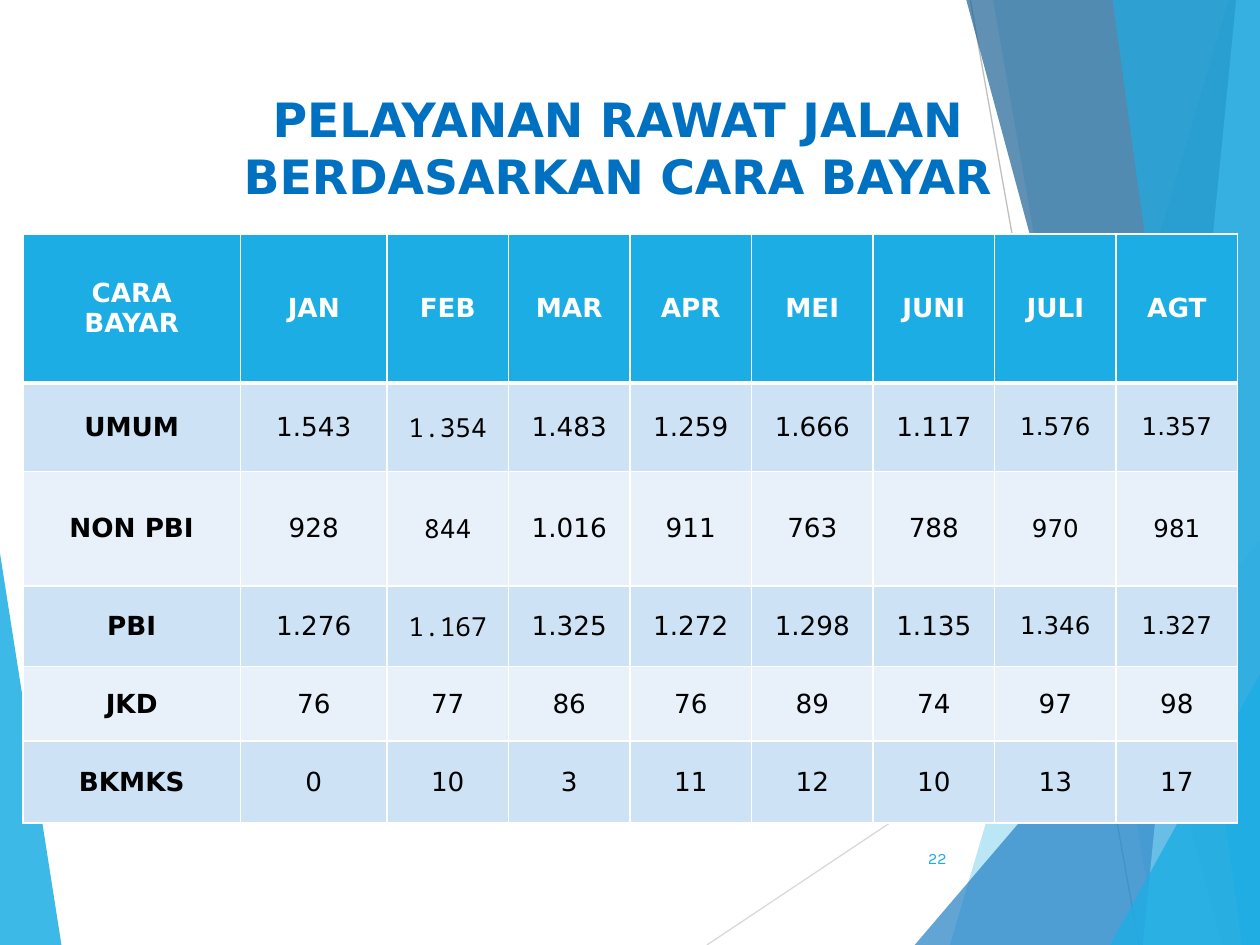
from lxml.etree import SubElement
from pptx import Presentation
from pptx.dml.color import RGBColor
from pptx.enum.shapes import MSO_CONNECTOR
from pptx.enum.text import MSO_ANCHOR as Anchor, MSO_AUTO_SIZE, PP_ALIGN as Align
from pptx.oxml.ns import qn
from pptx.util import Cm, Pt

SANS, MONO = "DejaVu Sans", "Noto Sans Mono"
CYAN, WHITE, BLACK = "1CADE4", "FFFFFF", "000000"
BANDS = ("CDE3F5", "E8F1FA")

MONTHS = ["JAN", "FEB", "MAR", "APR", "MEI", "JUNI", "JULI", "AGT"]
VISITS = {
    "UMUM": ["1.543", "1.354", "1.483", "1.259", "1.666", "1.117", "1.576", "1.357"],
    "NON PBI": ["928", "844", "1.016", "911", "763", "788", "970", "981"],
    "PBI": ["1.276", "1.167", "1.325", "1.272", "1.298", "1.135", "1.346", "1.327"],
    "JKD": ["76", "77", "86", "76", "89", "74", "97", "98"],
    "BKMKS": ["0", "10", "3", "11", "12", "10", "13", "17"],
}
ROW_HEIGHTS = [3, 1.78, 2.31, 1.63, 1.5, 1.65]
COLUMN_WIDTHS = [4.39, 2.95] + [2.45] * 7

# Left edge of each facet, top point to bottom x; then colour and opacity in %
FACETS = [
    (6.35, 0, 0.73, CYAN, 30),
    (1.6, 0, 4.92, CYAN, 20),
    (6.98, 10.9, 0.02, "2683C6", 72),
    (1.06, 0, 6.22, "1D6294", 70),
    (6.5, 0, 4.62, "77CEEF", 70),
    (4.01, 0, 6.62, CYAN, 65),
    (6.98, 13.59, 3.96, CYAN, 80),
]


def color(hex_code):
    return RGBColor.from_string(hex_code)


def format_text(frame, size, font, hex_code, bold=False, align=Align.CENTER):
    for paragraph in frame.paragraphs:
        paragraph.alignment = align
        for run in paragraph.runs:
            run.font.size = Pt(size)
            run.font.name = font
            run.font.bold = bold
            run.font.color.rgb = color(hex_code)


def set_margins(target, sides, ends):
    target.margin_left = target.margin_right = Cm(sides)
    target.margin_top = target.margin_bottom = Cm(ends)


def add_facet(slide, points, hex_code, opacity):
    corners = [(Cm(x), Cm(y)) for x, y in points]
    builder = slide.shapes.build_freeform(*corners[0], scale=1.0)
    builder.add_line_segments(corners[1:], close=True)
    facet = builder.convert_to_shape()
    facet.shadow.inherit = False
    facet.line.fill.background()
    facet.fill.solid()
    facet.fill.fore_color.rgb = color(hex_code)
    fill_color = facet.element.spPr.find(qn("a:solidFill"))[0]
    SubElement(fill_color, qn("a:alpha"), val=str(opacity * 1000))


def add_hairline(slide, start, end, hex_code):
    hairline = slide.shapes.add_connector(
        MSO_CONNECTOR.STRAIGHT, *(Cm(value) for value in start + end))
    hairline.line.color.rgb = color(hex_code)
    hairline.line.width = Pt(0.75)
    SubElement(hairline.element.spPr, qn("a:effectLst"))


def add_backdrop(slide, left, top, width, height):
    right, bottom = left + width, top + height
    # Left wedge
    add_facet(slide, [(left, top + 11.15), (left + 1.24, bottom), (left, bottom)],
              CYAN, 85)
    # Thin diagonals
    add_hairline(slide, (left + 14.25, bottom), (right, top + 11.61), "D9D9D9")
    add_hairline(slide, (left + 19.56, top), (left + 22.96, bottom), "BFBFBF")
    # Overlapping facets on the right
    facets_left = right - 6.98
    for top_x, top_y, bottom_x, hex_code, opacity in FACETS:
        points = [(facets_left + top_x, top + top_y), (facets_left + bottom_x, bottom),
                  (right, bottom), (right, top + top_y)]
        add_facet(slide, points, hex_code, opacity)


def place_title(slide, left, top, width, height):
    title = slide.shapes.title
    title.left, title.top, title.width, title.height = map(Cm, (left, top, width, height))
    frame = title.text_frame
    frame.text = "PELAYANAN RAWAT JALAN\vBERDASARKAN CARA BAYAR"
    frame.auto_size = MSO_AUTO_SIZE.NONE
    frame.vertical_anchor = Anchor.TOP
    frame.margin_right = Cm(0.75)
    format_text(frame, 27, SANS, "0070C0", bold=True)


def add_borders(cell, bottom_width):
    properties = cell._tc.get_or_add_tcPr()
    for side, width in (("L", 1), ("R", 1), ("T", 1), ("B", bottom_width)):
        border = SubElement(properties, qn(f"a:ln{side}"), w=str(Pt(width)))
        fill = SubElement(border, qn("a:solidFill"))
        SubElement(fill, qn("a:srgbClr"), val=WHITE)


def fill_cell(cell, text, row, column):
    is_header, is_label = row == 0, column == 0
    cell.text = text
    cell.vertical_anchor = Anchor.MIDDLE
    if is_header or is_label:
        set_margins(cell, 0.38, 0.18)
    else:
        set_margins(cell, 0, 0)
    add_borders(cell, 3 if is_header else 1)
    cell.fill.solid()
    cell.fill.fore_color.rgb = color(CYAN if is_header else BANDS[(row - 1) % 2])
    in_main_rows = 1 <= row <= 3
    format_text(cell.text_frame,
                size=14 if in_main_rows and column >= 7 else 15,
                font=MONO if in_main_rows and column == 2 else SANS,
                hex_code=WHITE if is_header else BLACK,
                bold=is_header or is_label)


def add_visits_table(slide, left, top, width, height):
    rows = [["CARA BAYAR"] + MONTHS]
    rows += [[payer] + counts for payer, counts in VISITS.items()]
    visits = slide.shapes.add_table(len(rows), len(rows[0]), Cm(left), Cm(top),
                                    Cm(width), Cm(height)).table
    for column, column_width in zip(visits.columns, COLUMN_WIDTHS):
        column.width = Cm(column_width)
    for row, row_height in zip(visits.rows, ROW_HEIGHTS):
        row.height = Cm(row_height)
    for r, texts in enumerate(rows):
        for c, text in enumerate(texts):
            fill_cell(visits.cell(r, c), text, r, c)


def add_page_number(slide, left, top, width, height):
    page_number = slide.shapes.add_textbox(*map(Cm, (left, top, width, height)))
    frame = page_number.text_frame
    frame.word_wrap = True
    frame.vertical_anchor = Anchor.MIDDLE
    frame.text = "22"
    format_text(frame, 9, "Karla", CYAN, align=Align.RIGHT)


def main():
    deck = Presentation()
    deck.slide_width, deck.slide_height = Cm(25.4), Cm(19.05)
    slide = deck.slides.add_slide(deck.slide_layouts[5])
    add_backdrop(slide, 0, 0, 25.4, 19.05)
    place_title(slide, 1.27, 1.7, 22.86, 2.8)
    add_visits_table(slide, 0.46, 4.72, sum(COLUMN_WIDTHS), sum(ROW_HEIGHTS))
    add_page_number(slide, 17.91, 16.79, 1.42, 1.02)
    deck.save("out.pptx")


if __name__ == "__main__":
    main()
